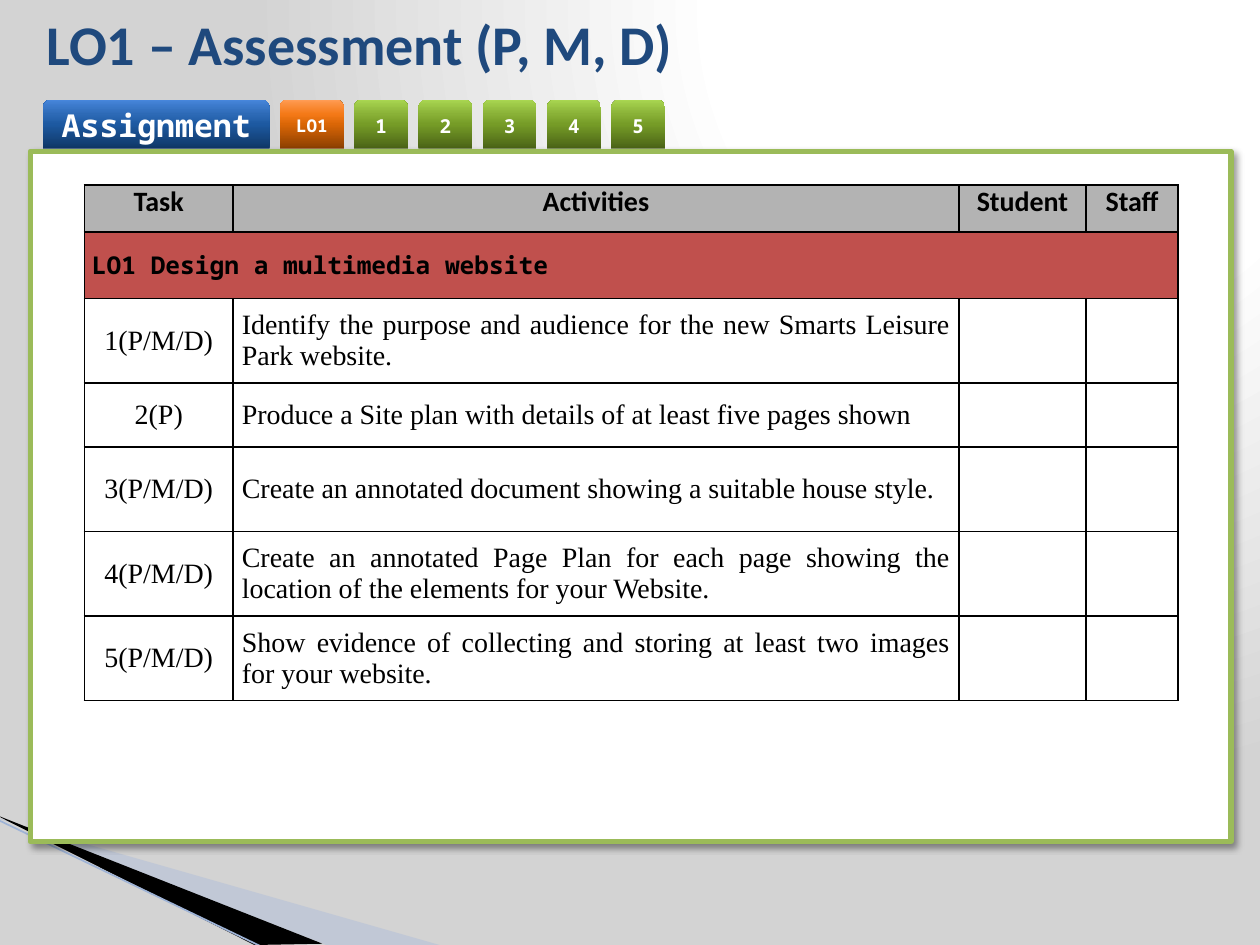
from pptx import Presentation
from pptx.dml.color import RGBColor as RGB
from pptx.enum.shapes import MSO_CONNECTOR as LINE, MSO_SHAPE as SHAPE
from pptx.enum.text import MSO_ANCHOR as ANCHOR, PP_ALIGN as ALIGN
from pptx.oxml import parse_xml
from pptx.oxml.ns import nsdecls, qn
from pptx.util import Inches, Pt

HEX = {"white": "FFFFFF", "black": "000000", "navy": "1F497D", "edge": "9BBB59",
       "head": "B3B3B3", "red": "C0504D", "mist": "A7B9DB", "ray": "9EB3D6"}
GREEN = [(0, "4A6316"), (50, "769C27"), (70, "89B137"), (100, "A9D651")]
BLUE = [(0, "0F3766"), (50, "1D59A1"), (70, "2D6AB6"), (100, "4786DB")]
ORANGE = [(0, "8B3F00"), (50, "DA6606"), (70, "F47917"), (100, "FF9C54")]
MONO = {"name": "Noto Sans Mono", "bold": True}
HEAD = {"name": "Calibri", "size": Pt(16), "bold": True}
BODY = {"name": "Times New Roman", "size": Pt(16), "bold": False}


def write(frame, text, style, color, align):
    para = frame.paragraphs[0]
    para.alignment = align
    run = para.add_run()
    run.text = text
    for key, value in style.items():
        setattr(run.font, key, value)
    run.font.color.rgb = RGB.from_string(HEX[color])


def shade(fill, root, stops, course):
    fill.gradient()
    old = root.find(".//" + qn("a:gradFill"))
    marks = "".join(f'<a:gs pos="{pos * 1000}"><a:srgbClr val="{tone}"/></a:gs>'
                    for pos, tone in stops)
    old.getparent().replace(old, parse_xml(
        f'<a:gradFill {nsdecls("a")} rotWithShape="1"><a:gsLst>{marks}</a:gsLst>'
        f'{course}</a:gradFill>'))


deck = Presentation()
deck.slide_width, deck.slide_height = Inches(10), Inches(7.5)
slide = deck.slides.add_slide(deck.slide_layouts[6])
shapes = slide.shapes

# Background
shade(slide.background.fill, slide.element,
      [(0, HEX["white"]), (40, HEX["white"]), (100, "D3D3D3")],
      '<a:path path="circle"><a:fillToRect l="65000" b="98000"/></a:path>')

# Corner rays
rays = [("mist", [(-0.01, 6.5), (3.49, 7.5), (2.59, 7.5), (-0.01, 6.49)]),
        ("black", [(0, 6.48), (2.56, 7.49), (2.02, 7.5), (0.01, 6.49)])]
for color, dots in rays:
    dots = [(Inches(x), Inches(y)) for x, y in dots]
    form = shapes.build_freeform(*dots[0])
    form.add_line_segments(dots[1:], close=True)
    ray = form.convert_to_shape()
    ray.shadow.inherit = False
    ray.fill.solid()
    ray.fill.fore_color.rgb = RGB.from_string(HEX[color])
    ray.line.fill.background()
    if color == "mist":
        tone = ray.element.spPr.find(".//" + qn("a:srgbClr"))
        tone.append(parse_xml(f'<a:alpha {nsdecls("a")} val="40000"/>'))

beam = shapes.add_connector(LINE.STRAIGHT, Inches(-0.01), Inches(6.51),
                            Inches(2.09), Inches(7.52))
beam.line.color.rgb = RGB.from_string(HEX["ray"])
beam.line.width = Pt(0.95)
beam.element.spPr.append(parse_xml(f'<a:effectLst {nsdecls("a")}/>'))

# Tabs
tabs = [("Assignment", 0.34, 1.8, 18, BLUE), ("LO1", 2.22, 0.51, 10, ORANGE)]
tabs += [(str(i + 1), 2.81 + 0.51 * i, 0.43, 11, GREEN) for i in range(5)]
for text, left, width, size, stops in tabs:
    tab = shapes.add_shape(SHAPE.ROUND_2_SAME_RECTANGLE, Inches(left), Inches(0.79),
                           Inches(width), Inches(0.39))
    tab.shadow.inherit = False
    shade(tab.fill, tab.element, stops, '<a:lin ang="16200000" scaled="0"/>')
    tab.line.fill.background()
    tab.text_frame.word_wrap = False
    tab.text_frame.vertical_anchor = ANCHOR.MIDDLE
    write(tab.text_frame, text, MONO | {"size": Pt(size)}, "white", ALIGN.CENTER)

# Panel
panel = shapes.add_shape(SHAPE.RECTANGLE, Inches(0.24), Inches(1.2),
                         Inches(9.53), Inches(5.48))
panel.shadow.inherit = False
panel.fill.solid()
panel.fill.fore_color.rgb = RGB.from_string(HEX["white"])
panel.line.color.rgb = RGB.from_string(HEX["edge"])
panel.line.width = Pt(3)
panel.element.spPr.find(qn("a:effectLst")).append(parse_xml(
    f'<a:outerShdw {nsdecls("a")} blurRad="{Pt(4)}" dist="{Pt(3)}" dir="2700000" '
    f'algn="tl" rotWithShape="0"><a:srgbClr val="{HEX["black"]}">'
    '<a:alpha val="40000"/></a:srgbClr></a:outerShdw>'))

# Title
title = shapes.add_textbox(Inches(0.27), Inches(-0.13), Inches(9), Inches(0.94))
title.text_frame.word_wrap = True
title.text_frame.vertical_anchor = ANCHOR.MIDDLE
write(title.text_frame, "LO1 – Assessment (P, M, D)", HEAD | {"size": Pt(32)},
      "navy", ALIGN.LEFT)

# Task table
rows = [
    ["Task", "Activities", "Student", "Staff"],
    ["LO1 Design a multimedia website"],
    ["1(P/M/D)", "Identify the purpose and audience for the new Smarts Leisure "
                 "Park website."],
    ["2(P)", "Produce a Site plan with details of at least five pages shown"],
    ["3(P/M/D)", "Create an annotated document showing a suitable house style."],
    ["4(P/M/D)", "Create an annotated Page Plan for each page showing the "
                 "location of the elements for your Website."],
    ["5(P/M/D)", "Show evidence of collecting and storing at least two images "
                 "for your website."],
]
wide = [1.18, 5.76, 1.01, 0.73]
high = [0.37, 0.53, 0.67, 0.51, 0.67, 0.67, 0.67]
grid = shapes.add_table(len(high), len(wide), Inches(0.67), Inches(1.47),
                        Inches(sum(wide)), Inches(sum(high))).table
for col, size in zip(grid.columns, wide):
    col.width = Inches(size)
for row, size in zip(grid.rows, high):
    row.height = Inches(size)
grid.cell(1, 0).merge(grid.cell(1, 3))

looks = {0: ("head", HEAD, 0.06), 1: ("red", MONO | {"size": Pt(14)}, 0.06)}
for r, texts in enumerate(rows):
    color, style, side = looks.get(r, ("white", BODY, 0.07))
    for c in range(len(wide)):
        cell = grid.cell(r, c)
        cell.margin_left = cell.margin_right = Inches(side)
        cell.margin_top = cell.margin_bottom = 0
        cell.vertical_anchor = ANCHOR.MIDDLE if r else ANCHOR.TOP
        props = cell._tc.get_or_add_tcPr()
        for edge in "LRTB":
            props.append(parse_xml(
                f'<a:ln{edge} {nsdecls("a")} w="{Pt(1)}"><a:solidFill>'
                f'<a:srgbClr val="{HEX["black"]}"/></a:solidFill></a:ln{edge}>'))
        cell.fill.solid()
        cell.fill.fore_color.rgb = RGB.from_string(HEX[color])
        if c < len(texts):
            align = ALIGN.LEFT if r == 1 else ALIGN.CENTER
            if r > 1 and c == 1:
                align = ALIGN.JUSTIFY
            write(cell.text_frame, texts[c], style, "black", align)

deck.save("out.pptx")
